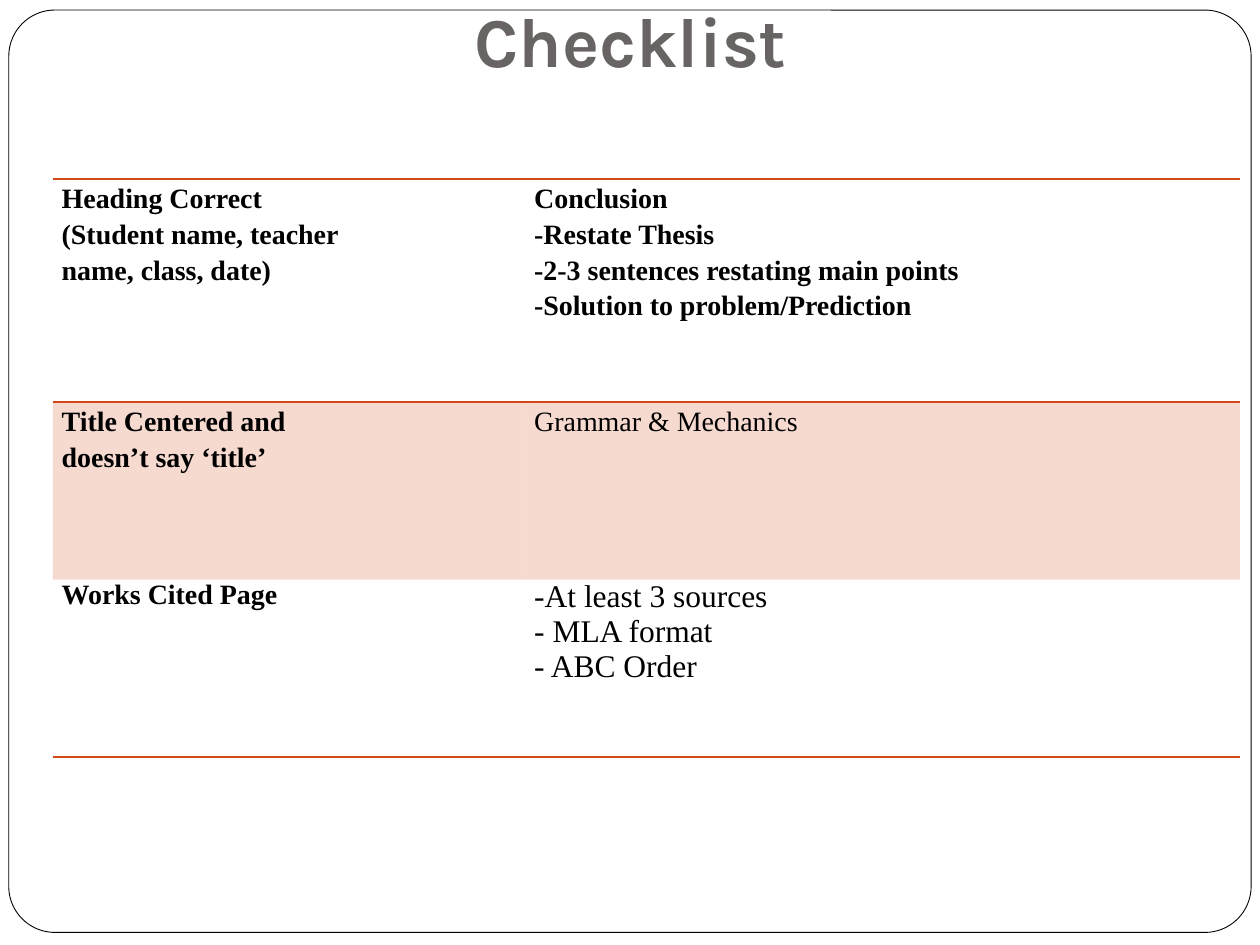
from lxml import etree
from pptx import Presentation
from pptx.dml.color import RGBColor
from pptx.enum import shapes, text
from pptx.oxml import ns
from pptx.util import Inches, Pt

WHITE = RGBColor(0xFF, 0xFF, 0xFF)
BLACK = RGBColor(0, 0, 0)
GRAY = RGBColor(0x69, 0x64, 0x64)
RUST = RGBColor(0xD3, 0x48, 0x17)

SERIF = {"name": "Times New Roman", "color": BLACK}
BOLD = {**SERIF, "size": 16, "bold": True}
PLAIN = {**SERIF, "size": 16, "bold": False}
LARGE = {**SERIF, "size": 18, "bold": False}
TITLE = {"name": "Karla", "color": GRAY, "size": 40, "bold": True}

COLS = [2.35, 1.4, 4.17, 1.5]
ROWS = [
    {"high": 1.77, "space": 1.15, "lines": "TB", "shade": False, "cells": {
        0: (BOLD, ["Heading Correct (Student name, teacher name, class, date)"]),
        2: (BOLD, ["Conclusion", "-Restate Thesis",
                   "-2-3 sentences restating main points",
                   "-Solution to problem/Prediction"])}},
    {"high": 1.41, "space": 1.15, "lines": "T", "shade": True, "cells": {
        0: (BOLD, ["Title Centered and doesn’t say ‘title’"]),
        2: (PLAIN, ["Grammar & Mechanics"])}},
    {"high": 1.41, "space": 1.0, "lines": "B", "shade": False, "cells": {
        0: (BOLD, ["Works Cited Page"]),
        2: (LARGE, ["-At least 3 sources", "- MLA format", "- ABC Order"])}},
]


def style(font, form):
    for key, value in form.items():
        if key == "color":
            font.color.rgb = value
        else:
            setattr(font, key, Pt(value) if key == "size" else value)


def inset(frame, sides):
    for side, value in zip(("left", "top", "right", "bottom"), sides):
        setattr(frame, f"margin_{side}", Inches(value))


def write(frame, lines, form, space=1.0, align=text.PP_ALIGN.LEFT):
    for i, line in enumerate(lines):
        para = frame.add_paragraph() if i else frame.paragraphs[0]
        para.alignment = align
        para.line_spacing = space
        run = para.add_run()
        run.text = line
        style(run.font, form)


def border(cell, sides):
    props = cell._tc.get_or_add_tcPr()
    for i, side in enumerate("LRTB"):
        line = etree.Element(ns.qn(f"a:ln{side}"), w=str(Pt(1)))
        if side in sides:
            fill = etree.SubElement(line, ns.qn("a:solidFill"))
            etree.SubElement(fill, ns.qn("a:srgbClr"), val=str(RUST))
        else:
            etree.SubElement(line, ns.qn("a:noFill"))
        props.insert(i, line)


def shade(cell, on):
    if not on:
        cell.fill.background()
        return
    cell.fill.solid()
    cell.fill.fore_color.rgb = RUST
    tint = cell._tc.tcPr.find(".//" + ns.qn("a:solidFill") + "/" + ns.qn("a:srgbClr"))
    etree.SubElement(tint, ns.qn("a:alpha"), val="20000")


def frame(slide, box):
    card = slide.shapes.add_shape(shapes.MSO_SHAPE.ROUNDED_RECTANGLE, *map(Inches, box))
    card.adjustments[0] = 0.05
    card.shadow.inherit = False
    card.fill.solid()
    card.fill.fore_color.rgb = WHITE
    card.line.color.rgb = BLACK
    card.line.width = Pt(0.5)


def title(slide, box):
    area = slide.shapes.add_textbox(*map(Inches, box)).text_frame
    area.word_wrap = True
    area.vertical_anchor = text.MSO_ANCHOR.BOTTOM
    inset(area, (0.1, 0.05, 0.1, 0.1))
    write(area, ["Checklist"], TITLE, align=text.PP_ALIGN.CENTER)


def checklist(slide, box):
    grid = slide.shapes.add_table(len(ROWS), len(COLS), *map(Inches, box)).table
    grid.first_row = grid.horz_banding = False
    for col, wide in zip(grid.columns, COLS):
        col.width = Inches(wide)
    for row, data in zip(grid.rows, ROWS):
        row.height = Inches(data["high"])
        for i, cell in enumerate(row.cells):
            shade(cell, data["shade"])
            border(cell, data["lines"])
            inset(cell, (0.07, 0, 0.07, 0))
            if i in data["cells"]:
                form, lines = data["cells"][i]
                write(cell.text_frame, lines, form, data["space"])


def main():
    deck = Presentation()
    deck.slide_width, deck.slide_height = Inches(10), Inches(7.5)
    slide = deck.slides.add_slide(deck.slide_layouts[6])
    frame(slide, (0.07, 0.08, 9.86, 7.32))
    title(slide, (0.17, 0.17, 9.67, 0.58))
    checklist(slide, (0.42, 1.42, sum(COLS), sum(row["high"] for row in ROWS)))
    deck.save("out.pptx")


if __name__ == "__main__":
    main()
